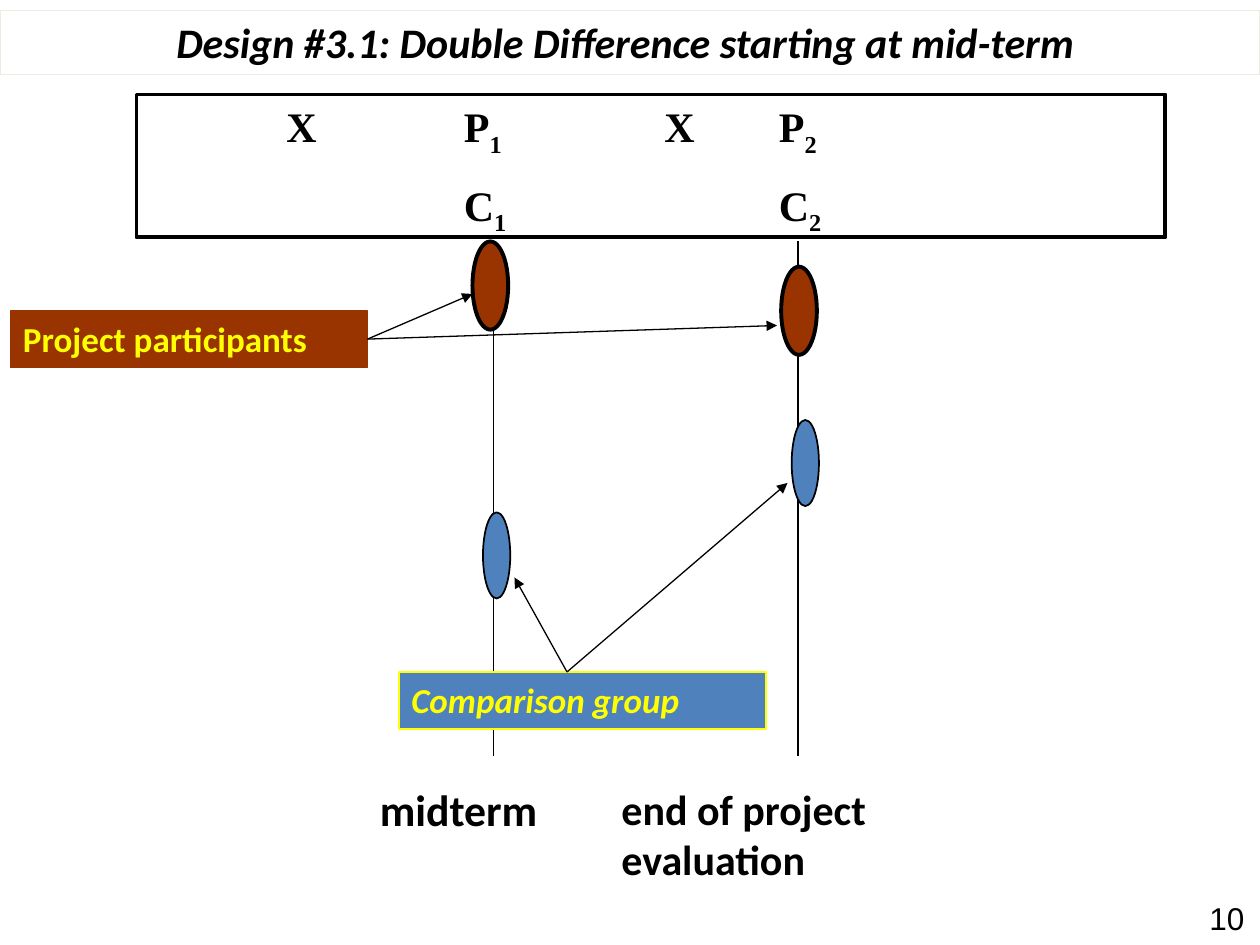
from typing import NamedTuple, Optional

from lxml.etree import SubElement
from pptx import Presentation
from pptx.dml.color import RGBColor
from pptx.enum.shapes import MSO_CONNECTOR, MSO_SHAPE
from pptx.enum.text import MSO_ANCHOR, MSO_AUTO_SIZE, PP_ALIGN
from pptx.oxml.ns import qn
from pptx.util import Inches, Pt

BLACK = RGBColor(0x00, 0x00, 0x00)
BROWN = RGBColor(0x99, 0x33, 0x00)
BLUE = RGBColor(0x4F, 0x81, 0xBD)
YELLOW = RGBColor(0xFF, 0xFF, 0x00)
CREAM = RGBColor(0xEE, 0xEC, 0xE1)

UNIT = Inches(1) // 12  # the slide is a grid of 120 columns by 90 rows
COLS, ROWS = 120, 90
MIDTERM, END = 47, 76  # columns of the two time lines
TABS = (1.09, 2.5, 4.09, 5.0)  # inches: X, P1/C1, X, P2/C2


class Box(NamedTuple):
    col: float
    row: float
    cols: float
    rows: float
    fill: Optional[RGBColor] = None
    line: Optional[RGBColor] = None
    weight: float = 1


class Label(NamedTuple):
    text: str
    box: Box
    fmt: dict
    align: PP_ALIGN = PP_ALIGN.LEFT


class Arrow(NamedTuple):
    start: tuple
    end: tuple


def font(size: float, color: RGBColor = BLACK, **extra) -> dict:
    return {"name": "Calibri", "size": Pt(size), "bold": True, "color": color, **extra}


LABELS = {
    "end": Label("end of project evaluation", Box(58, 74, 31, 10.8), font(24)),
    "comparison": Label("Comparison group", Box(38, 64, 35, 5.4, BLUE, YELLOW),
                        font(20, YELLOW, italic=True)),
    "title": Label("Design #3.1: Double Difference starting at mid-term ",
                   Box(0, 1, COLS, 6.1, None, CREAM), font(24, italic=True), PP_ALIGN.CENTER),
    "participants": Label("Project participants", Box(1, 29.6, 34, 5.4, BROWN, BROWN),
                          font(20, YELLOW)),
    "midterm": Label("midterm", Box(35, 74, 21, 6.2), font(25)),
    "number": Label("10", Box(114, 85, 10, 4.6), font(18, name="Arial", bold=False)),
}
DESIGN_BOX = Box(13, 9, 98, 13.6, None, BLACK, 2.25)
# Each row: (text, is subscript)
DESIGN_ROWS = (
    (("\tX\tP", False), ("1", True), ("\tX\tP", False), ("2", True)),
    (("\t\tC", False), ("1", True), ("\t\tC", False), ("2", True)),
)
OVALS = tuple(
    Box(col, row, *size, fill, BLACK, weight)
    for size, fill, weight, places in (
        ((3.4, 8.4), BROWN, 2.25, ((45, 23), (74.4, 25.4))),
        ((2.6, 8.2), BLUE, 1, ((46, 48.8), (75.4, 40))),
    )
    for col, row in places
)
PARTICIPANT_ARROWS = (Arrow((35, 32), (45, 28)), Arrow((35, 32), (74, 31)))
COMPARISON_ARROWS = (Arrow((54, 64), (49, 55)), Arrow((54, 64), (75, 46)))


def grid(*values: float) -> list:
    return [int(v * UNIT) for v in values]


def add_box(s, box: Box, shape: MSO_SHAPE = MSO_SHAPE.RECTANGLE):
    place = grid(box.col, box.row, box.cols, box.rows)
    if box.fill is None and box.line is None:
        return s.shapes.add_textbox(*place)
    sp = s.shapes.add_shape(shape, *place)
    sp.shadow.inherit = False
    if box.fill is None:
        sp.fill.background()
    else:
        sp.fill.solid()
        sp.fill.fore_color.rgb = box.fill
    sp.line.color.rgb = box.line
    sp.line.width = Pt(box.weight)
    return sp


def prepare(tf) -> None:
    tf.word_wrap = True
    tf.auto_size = MSO_AUTO_SIZE.SHAPE_TO_FIT_TEXT
    tf.vertical_anchor = MSO_ANCHOR.TOP


def space_before(p, percent: int) -> None:
    before = SubElement(p._p.get_or_add_pPr(), qn("a:spcBef"))
    SubElement(before, qn("a:spcPct"), val=str(percent * 1000))


def add_run(p, text: str, fmt: dict):
    r = p.add_run()
    r.text = text
    for key, value in fmt.items():
        if key == "color":
            r.font.color.rgb = value
        else:
            setattr(r.font, key, value)
    return r


def add_label(s, label: Label):
    sp = add_box(s, label.box)
    prepare(sp.text_frame)
    p = sp.text_frame.paragraphs[0]
    p.alignment = label.align
    space_before(p, 50)
    add_run(p, label.text, label.fmt)
    return sp


def add_design(s) -> None:
    tf = add_box(s, DESIGN_BOX).text_frame
    prepare(tf)
    for i, row in enumerate(DESIGN_ROWS):
        p = tf.add_paragraph() if i else tf.paragraphs[0]
        p.alignment = PP_ALIGN.LEFT
        space_before(p, 50)
        tabs = SubElement(p._p.get_or_add_pPr(), qn("a:tabLst"))
        for pos in TABS:
            SubElement(tabs, qn("a:tab"), pos=str(Inches(pos)), algn="l")
        for text, subscript in row:
            r = add_run(p, text, font(24, name="Times New Roman"))
            if subscript:
                r._r.get_or_add_rPr().set("baseline", "-25000")


def add_line(s, start: tuple, end: tuple, weight: float, arrow: bool = False):
    line = s.shapes.add_connector(MSO_CONNECTOR.STRAIGHT, *grid(*start, *end))
    line.line.color.rgb = BLACK
    line.line.width = Pt(weight)
    if arrow:
        SubElement(line.line._get_or_add_ln(), qn("a:tailEnd"), type="triangle")
    SubElement(line._element.spPr, qn("a:effectLst"))
    return line


def main() -> None:
    prs = Presentation()
    prs.slide_width, prs.slide_height = COLS * UNIT, ROWS * UNIT
    s = prs.slides.add_slide(prs.slide_layouts[6])

    # Time lines
    for col in (MIDTERM, END):
        add_line(s, (col, 72), (col, 23), 1)

    # Labels, design table and groups
    labels = {name: add_label(s, label) for name, label in LABELS.items()}
    add_design(s)
    for oval in OVALS:
        add_box(s, oval, MSO_SHAPE.OVAL)

    # Arrows from the labels to the groups
    for arrow in PARTICIPANT_ARROWS:
        line = add_line(s, *arrow, 0.75, arrow=True)
        line.begin_connect(labels["participants"], 3)
    for arrow in COMPARISON_ARROWS:
        add_line(s, *arrow, 0.75, arrow=True)

    prs.save("out.pptx")


if __name__ == "__main__":
    main()
